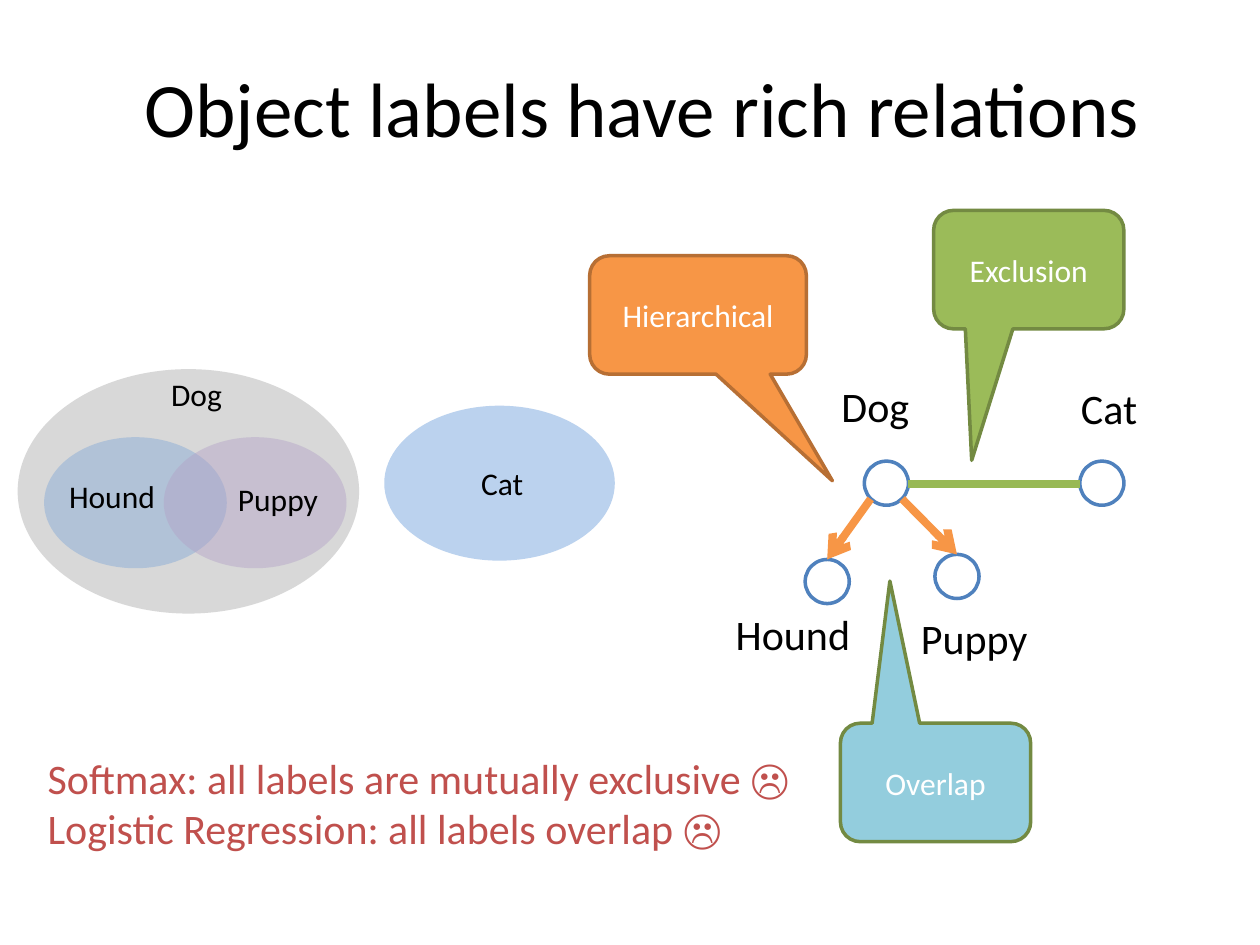
from pptx import Presentation
from pptx.dml.color import RGBColor
from pptx.enum.shapes import MSO_CONNECTOR, MSO_SHAPE
from pptx.enum.text import MSO_ANCHOR, MSO_AUTO_SIZE, PP_ALIGN
from pptx.oxml.ns import qn
from pptx.util import Inches, Pt
from lxml import etree

STRAIGHT = MSO_CONNECTOR.STRAIGHT
ELLIPSE = MSO_SHAPE.OVAL
CALLOUT = MSO_SHAPE.ROUNDED_RECTANGULAR_CALLOUT
MIDDLE = MSO_ANCHOR.MIDDLE
GROW = MSO_AUTO_SIZE.SHAPE_TO_FIT_TEXT
LEFT, CENTER = PP_ALIGN.LEFT, PP_ALIGN.CENTER
TITLE_ONLY = 5
TOP_SITE = 0

BLACK, WHITE, RED = "000000", "FFFFFF", "C0504D"
BLUE, ORANGE, GREEN = "4F81BD", "F79646", "98B955"
DARK_GREEN = "738A42"
NODE_SIZE = 0.35


def color(hex_text):
    return RGBColor.from_string(hex_text)


def place(shape, left, top, width, height):
    shape.left, shape.top = Inches(left), Inches(top)
    shape.width, shape.height = Inches(width), Inches(height)


def write(frame, text, size=18, fill=BLACK, align=LEFT, font="Calibri"):
    """Put each line of text into its own formatted paragraph."""
    for index, line in enumerate(text.split("\n")):
        para = frame.add_paragraph() if index else frame.paragraphs[0]
        para.alignment = align
        span = para.add_run()
        span.text = line
        span.font.name = font
        span.font.size = Pt(size)
        span.font.color.rgb = color(fill)


class Builder:
    """Holds the current slide and the shared style of its elements."""

    outline_width = 2
    link_width = 4.5

    def __init__(self, slide):
        self.slide = slide
        self.shapes = slide.shapes

    def title(self, text, *bounds):
        box = self.shapes.title
        place(box, *bounds)
        box.text_frame.vertical_anchor = MIDDLE
        write(box.text_frame, text, size=44, align=CENTER)

    def label(self, text, *bounds, **style):
        box = self.shapes.add_textbox(*map(Inches, bounds))
        box.text_frame.word_wrap = True
        box.text_frame.auto_size = GROW
        write(box.text_frame, text, **style)

    def shape(self, preset, bounds, fill, line=None):
        shape = self.shapes.add_shape(preset, *map(Inches, bounds))
        shape.shadow.inherit = False
        shape.fill.solid()
        shape.fill.fore_color.rgb = color(fill)
        if line:
            shape.line.color.rgb = color(line)
            shape.line.width = Pt(self.outline_width)
        else:
            shape.line.fill.background()
        return shape

    def node(self, left, top):
        bounds = (left, top, NODE_SIZE, NODE_SIZE)
        return self.shape(ELLIPSE, bounds, WHITE, BLUE)

    def region(self, bounds, fill, opacity):
        """Draw a translucent set; opacity is in percent."""
        shape = self.shape(ELLIPSE, bounds, fill)
        tint = shape.fill._xPr.find(".//" + qn("a:srgbClr"))
        etree.SubElement(tint, qn("a:alpha"), val=str(opacity * 1000))

    def callout(self, text, bounds, pointer, fill, line):
        """Draw a callout; pointer is its tip, relative to centre and size."""
        shape = self.shape(CALLOUT, bounds, fill, line)
        shape.adjustments[0], shape.adjustments[1] = pointer
        shape.text_frame.vertical_anchor = MIDDLE
        write(shape.text_frame, text, fill=WHITE, align=CENTER)

    def link(self, start, end, line, child=None):
        """Draw a plain line, or an arrow joined to the top of a child node."""
        link = self.shapes.add_connector(STRAIGHT, *map(Inches, start + end))
        link.line.color.rgb = color(line)
        link.line.width = Pt(self.link_width)
        if child is not None:
            link.end_connect(child, TOP_SITE)
            etree.SubElement(link.line._get_or_add_ln(), qn("a:tailEnd"), type="arrow")
        etree.SubElement(link._element.spPr, qn("a:effectLst"))


def draw_graph(page):
    for text, left, top in (("Hound", 5.74, 4.78), ("Puppy", 7.21, 4.81),
                            ("Dog", 6.58, 2.97), ("Cat", 8.48, 2.99)):
        page.label(text, left, top, 1.52, 0.5, size=24)

    page.node(6.86, 3.66)
    hound = page.node(6.39, 4.44)
    puppy = page.node(7.42, 4.4)
    page.node(8.57, 3.66)

    page.link((6.91, 3.96), (6.57, 4.44), ORANGE, child=hound)
    page.link((7.16, 3.96), (7.6, 4.4), ORANGE, child=puppy)
    page.link((7.21, 3.84), (8.57, 3.84), GREEN)

    page.callout("Exclusion", (7.41, 1.67, 1.51, 0.94), (-0.3, 1.61), "9BBB59", DARK_GREEN)
    page.callout("Hierarchical", (4.68, 2.03, 1.72, 0.94), (0.62, 1.4), ORANGE, "B76F34")


def draw_sets(page):
    page.region((0.14, 2.93, 2.71, 1.94), "BFBFBF", 60)
    page.region((3.05, 3.22, 1.83, 1.23), "8EB4E3", 60)
    page.region((0.35, 3.47, 1.45, 1.04), "95B3D7", 58)
    page.region((1.3, 3.47, 1.45, 1.04), "B3A2C7", 45)
    for text, left, top, width in (("Dog", 1.26, 2.93, 0.72), ("Cat", 3.72, 3.63, 0.72),
                                   ("Hound", 0.45, 3.74, 0.9), ("Puppy", 1.79, 3.76, 1.05)):
        page.label(text, left, top, width, 0.4)


def main():
    deck = Presentation()
    deck.slide_width, deck.slide_height = Inches(10), Inches(7.5)
    page = Builder(deck.slides.add_slide(deck.slide_layouts[TITLE_ONLY]))

    page.title("Object labels have rich relations", 0.35, 0.22, 9.5, 1.25)
    draw_graph(page)
    draw_sets(page)
    page.callout("Overlap", (6.67, 5.74, 1.51, 0.94), (-0.24, -1.7), "93CDDD", DARK_GREEN)
    page.label("Softmax: all labels are mutually exclusive ☹\n"
               "Logistic Regression: all labels overlap ☹",
               0.28, 5.92, 6.3, 0.91, size=24, fill=RED)
    deck.save("out.pptx")


if __name__ == "__main__":
    main()
